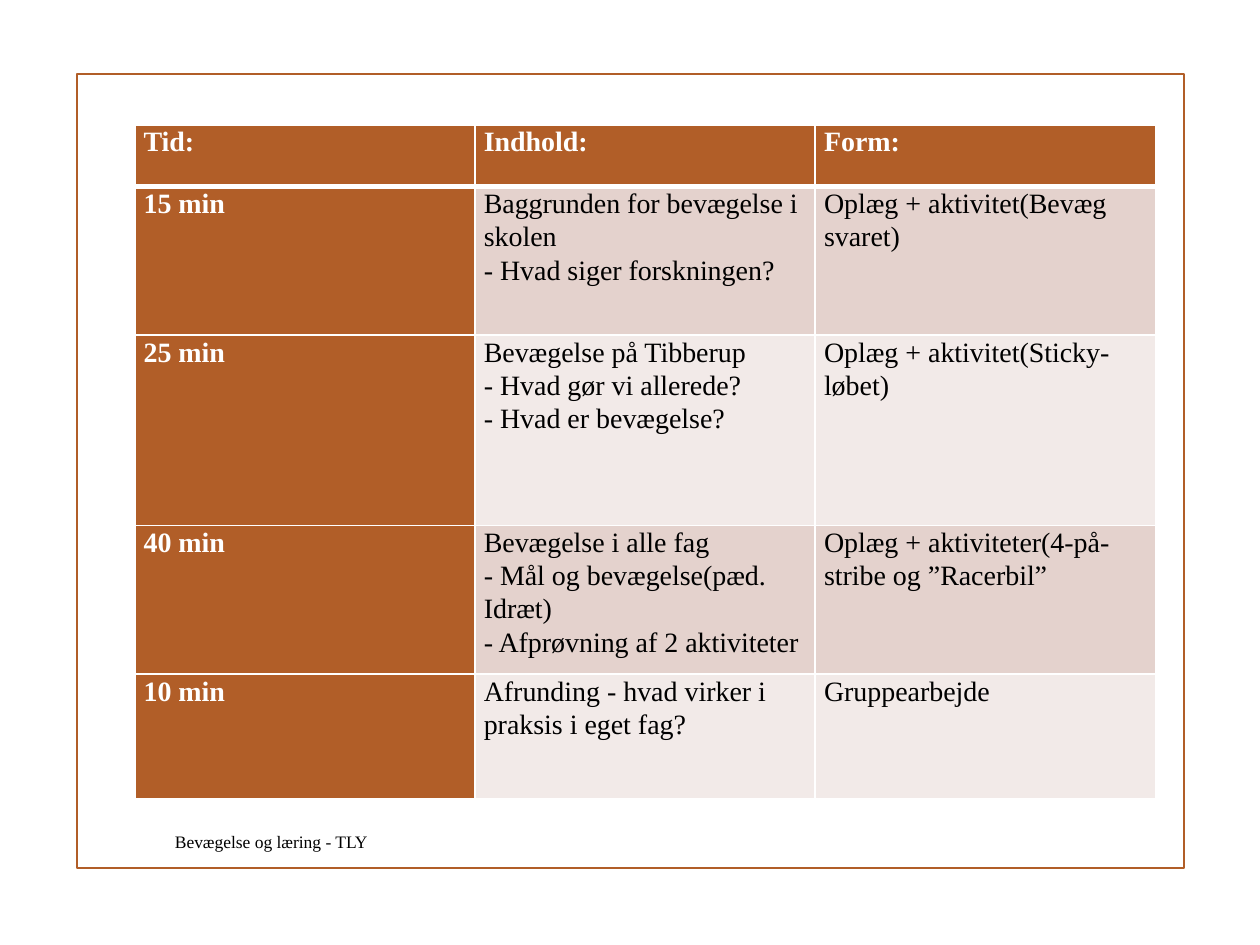
from lxml import etree
from pptx import Presentation
from pptx import util as u
from pptx.dml.color import RGBColor
from pptx.enum import shapes, text
from pptx.oxml.ns import qn

RUST = RGBColor(0xB1, 0x5E, 0x28)
ROSE = RGBColor(0xE4, 0xD2, 0xCD)
PALE = RGBColor(0xF2, 0xEA, 0xE8)
WHITE = RGBColor(0xFF, 0xFF, 0xFF)
BLACK = RGBColor(0, 0, 0)
FONT = "Times New Roman"

HEADINGS = ("Tid:", "Indhold:", "Form:")
PROGRAMME = (
    ("15 min",
     "Baggrunden for bevægelse i skolen\n- Hvad siger forskningen?",
     "Oplæg + aktivitet(Bevæg svaret)"),
    ("25 min",
     "Bevægelse på Tibberup\n- Hvad gør vi allerede?\n- Hvad er bevægelse?",
     "Oplæg + aktivitet(Sticky-løbet)"),
    ("40 min",
     "Bevægelse i alle fag\n- Mål og bevægelse(pæd. Idræt)\n- Afprøvning af 2 aktiviteter",
     "Oplæg + aktiviteter(4-på-stribe og ”Racerbil”"),
    ("10 min",
     "Afrunding - hvad virker i praksis i eget fag?",
     "Gruppearbejde"),
)
ROW_HEIGHTS = (0.49, 1.18, 1.51, 1.18, 0.99)
COLUMN_WIDTH = 2.7


def write_text(frame, wording, size=16, color=BLACK, bold=False, spacing=None):
    """Write one paragraph per line of wording in the given format."""
    frame.word_wrap = True
    frame.text = wording
    for para in frame.paragraphs:
        para.line_spacing = spacing
        for span in para.runs:
            span.font.name = FONT
            span.font.size = u.Pt(size)
            span.font.bold = bold
            span.font.color.rgb = color


def set_borders(cell, bottom=1, top=1):
    """Give a cell white borders with chosen top and bottom widths in points."""
    properties = cell._tc.get_or_add_tcPr()
    widths = {"a:lnL": 1, "a:lnR": 1, "a:lnT": top, "a:lnB": bottom}
    for index, (tag, width) in enumerate(widths.items()):
        line = etree.Element(qn(tag), w=str(u.Pt(width)))
        fill = etree.SubElement(line, qn("a:solidFill"))
        etree.SubElement(fill, qn("a:srgbClr"), val=str(WHITE))
        properties.insert(index, line)


def fill_cell(cell, wording, fill, strong, top, bottom):
    """Set the text, fill, margins and borders of one table cell."""
    cell.margin_left = cell.margin_right = u.Inches(0.07)
    cell.margin_top = cell.margin_bottom = 0
    cell.fill.solid()
    cell.fill.fore_color.rgb = fill
    set_borders(cell, top=top, bottom=bottom)
    write_text(cell.text_frame, wording, color=WHITE if strong else BLACK,
               bold=strong, spacing=1.07)


def add_frame(page):
    """Draw the thin frame around the page content."""
    frame = page.shapes.add_shape(
        shapes.MSO_SHAPE.RECTANGLE,
        u.Inches(0.61), u.Inches(0.59), u.Inches(8.79), u.Inches(6.3))
    frame.shadow.inherit = False
    frame.fill.background()
    frame.line.color.rgb = RUST
    frame.line.width = u.Pt(1.25)


def add_footer(page, wording):
    """Add the small footer line inside the frame."""
    box = page.shapes.add_textbox(
        u.Inches(1.29), u.Inches(6.52), u.Inches(5.58), u.Inches(0.31))
    write_text(box.text_frame, wording, size=10)
    box.text_frame.vertical_anchor = text.MSO_ANCHOR.MIDDLE


def add_programme(page):
    """Add the table of times, contents and forms."""
    rows = (HEADINGS, *PROGRAMME)
    table = page.shapes.add_table(
        len(rows), len(HEADINGS), u.Inches(1.07), u.Inches(0.99),
        u.Inches(COLUMN_WIDTH * len(HEADINGS)), u.Inches(sum(ROW_HEIGHTS))).table
    for column in table.columns:
        column.width = u.Inches(COLUMN_WIDTH)
    for r, wordings in enumerate(rows):
        table.rows[r].height = u.Inches(ROW_HEIGHTS[r])
        band = ROSE if r % 2 else PALE
        for c, wording in enumerate(wordings):
            strong = r == 0 or c == 0
            fill_cell(table.cell(r, c), wording, RUST if strong else band, strong,
                      top=3 if r == 1 else 1, bottom=3 if r == 0 else 1)


def main():
    """Build the programme slide and save it."""
    deck = Presentation()
    deck.slide_width, deck.slide_height = u.Inches(10), u.Inches(7.5)
    page = deck.slides.add_slide(deck.slide_layouts[6])
    add_frame(page)
    add_footer(page, "Bevægelse og læring - TLY")
    add_programme(page)
    deck.save("out.pptx")


if __name__ == "__main__":
    main()
